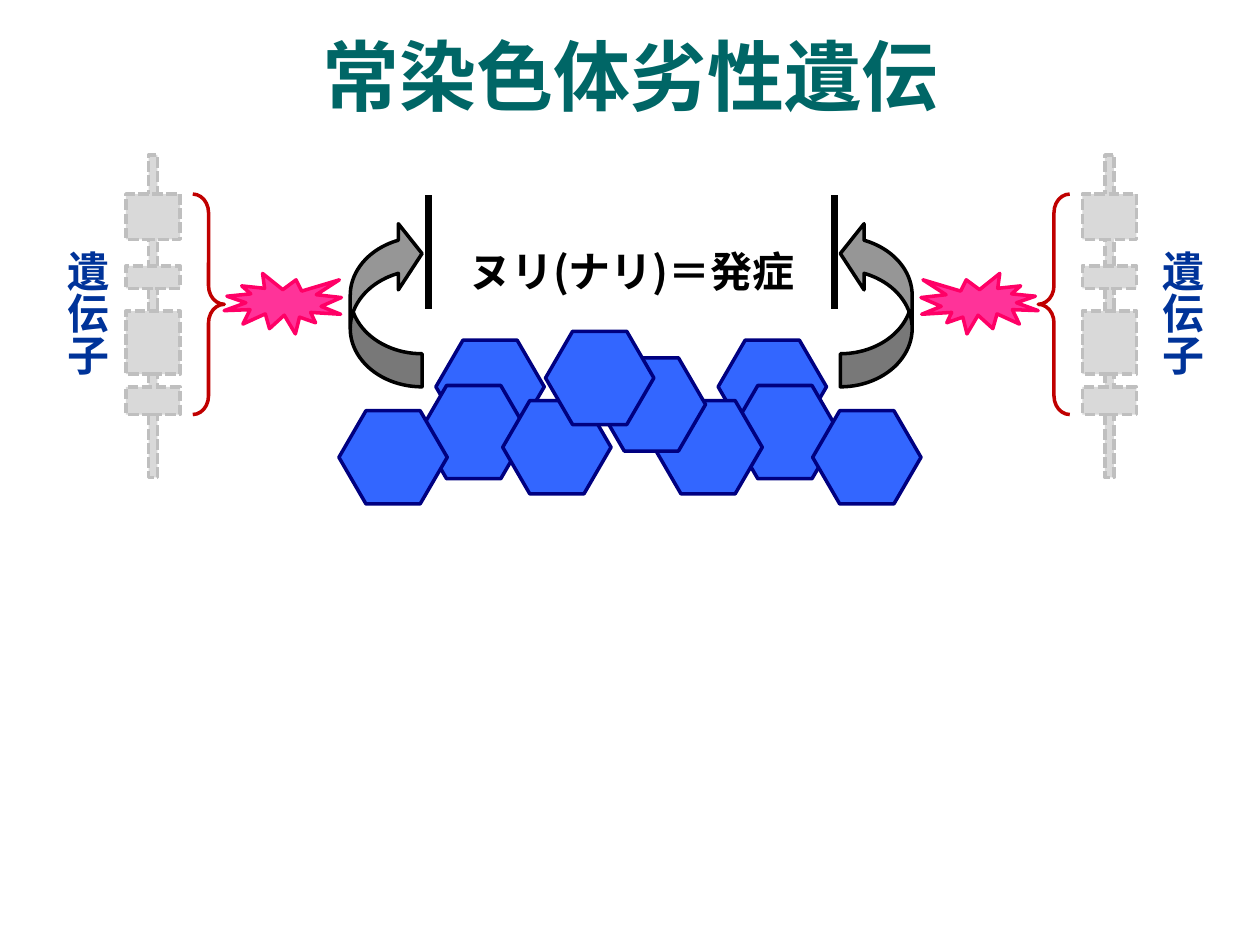
from lxml.etree import SubElement
from pptx import Presentation
from pptx.dml.color import RGBColor
from pptx.enum.dml import MSO_LINE
from pptx.enum.shapes import MSO_CONNECTOR, MSO_SHAPE
from pptx.enum.text import MSO_ANCHOR, MSO_AUTO_SIZE, PP_ALIGN
from pptx.oxml.ns import qn
from pptx.util import Inches, Pt

FONT = "Noto Sans CJK JP"
MIRROR_SUM = 10.02
GENE_BLOCKS = [(1.54, 0.36), (2.11, 0.18), (2.47, 0.5), (3.07, 0.22)]
PROTEINS = [
    (5.7, 2.7), (5.8, 3.06), (5.19, 3.18), (4.74, 2.84), (6.45, 3.26),
    (3.46, 2.7), (3.33, 3.06), (3.99, 3.18), (4.33, 2.63), (2.69, 3.26),
]


def color(hex_value):
    return RGBColor.from_string(hex_value)


def add_figure(slide, preset, left, top, width, height, line, fill=None,
               adjustments=(), flip_h=False, flip_v=False, dashed=False):
    figure = slide.shapes.add_shape(
        preset, Inches(left), Inches(top), Inches(width), Inches(height))
    figure.shadow.inherit = False
    if fill:
        figure.fill.solid()
        figure.fill.fore_color.rgb = color(fill)
    else:
        figure.fill.background()
    figure.line.color.rgb = color(line)
    figure.line.width = Pt(2)
    if dashed:
        figure.line.dash_style = MSO_LINE.SQUARE_DOT
    for index, value in enumerate(adjustments):
        figure.adjustments[index] = value
    xfrm = figure._element.spPr.xfrm
    if flip_h:
        xfrm.set("flipH", "1")
    if flip_v:
        xfrm.set("flipV", "1")


def add_text(slide, text, left, top, width, height, size=24, hex_color="000000",
             align=PP_ALIGN.CENTER, anchor=MSO_ANCHOR.TOP, vertical=False, grow=True):
    box = slide.shapes.add_textbox(
        Inches(left), Inches(top), Inches(width), Inches(height))
    frame = box.text_frame
    frame.word_wrap = not vertical
    frame.vertical_anchor = anchor
    if grow:
        frame.auto_size = MSO_AUTO_SIZE.SHAPE_TO_FIT_TEXT
    if vertical:
        frame._txBody.bodyPr.set("vert", "eaVert")
    paragraph = frame.paragraphs[0]
    paragraph.alignment = align
    run = paragraph.add_run()
    run.text = text
    run.font.size = Pt(size)
    run.font.bold = True
    run.font.color.rgb = color(hex_color)
    run.font.name = FONT
    SubElement(run._r.get_or_add_rPr(), qn("a:ea"), typeface=FONT)


def add_barrier(slide, x, top, bottom):
    barrier = slide.shapes.add_connector(
        MSO_CONNECTOR.STRAIGHT, Inches(x), Inches(top), Inches(x), Inches(bottom))
    barrier.line.color.rgb = color("000000")
    barrier.line.width = Pt(4)
    SubElement(barrier._element.spPr, qn("a:effectLst"))


def add_gene_side(slide, mirrored):
    def place(left, width):
        return MIRROR_SUM - left - width if mirrored else left

    def add_part(preset, left, top, width, height, line, **options):
        add_figure(slide, preset, place(left, width), top, width, height, line, **options)

    gene_style = {"line": "BFBFBF", "fill": "D9D9D9", "dashed": True}
    add_part(MSO_SHAPE.RECTANGLE, 1.18, 1.23, 0.07, 2.56, **gene_style)
    for top, height in GENE_BLOCKS:
        add_part(MSO_SHAPE.RECTANGLE, 1, top, 0.43, height, **gene_style)
    add_part(MSO_SHAPE.RIGHT_BRACE, 1.53, 1.54, 0.25, 1.75, "C00000",
             adjustments=(0.59, 0.5), flip_h=mirrored)
    add_part(MSO_SHAPE.EXPLOSION1, 1.78, 2.17, 0.93, 0.48, "FF0066",
             fill="FF3399", flip_h=not mirrored)
    add_part(MSO_SHAPE.CURVED_RIGHT_ARROW, 2.78, 1.75, 0.57, 1.32, "000000",
             fill="969696", adjustments=(0.46, 0.92, 0.33), flip_h=mirrored, flip_v=True)
    add_text(slide, "遺伝子", place(0.39, 0.55), 1.89, 0.55, 0.99,
             hex_color="003399", align=PP_ALIGN.LEFT, vertical=True)
    add_barrier(slide, place(3.4, 0), 1.55, 2.45)


def main():
    presentation = Presentation()
    presentation.slide_width = Inches(10)
    presentation.slide_height = Inches(7.5)
    slide = presentation.slides.add_slide(presentation.slide_layouts[6])
    for mirrored in (False, True):
        add_gene_side(slide, mirrored)
    for left, top in PROTEINS:
        add_figure(slide, MSO_SHAPE.HEXAGON, left, top, 0.86, 0.74, "000080",
                   fill="3366FF", adjustments=(0.29,))
    add_text(slide, "ヌリ(ナリ)＝発症", 3.46, 1.9, 3.11, 0.51)
    add_text(slide, "常染色体劣性遺伝", 0.28, 0.2, 9.45, 0.79, size=44,
             hex_color="006666", anchor=MSO_ANCHOR.MIDDLE, grow=False)
    presentation.save("out.pptx")


if __name__ == "__main__":
    main()
